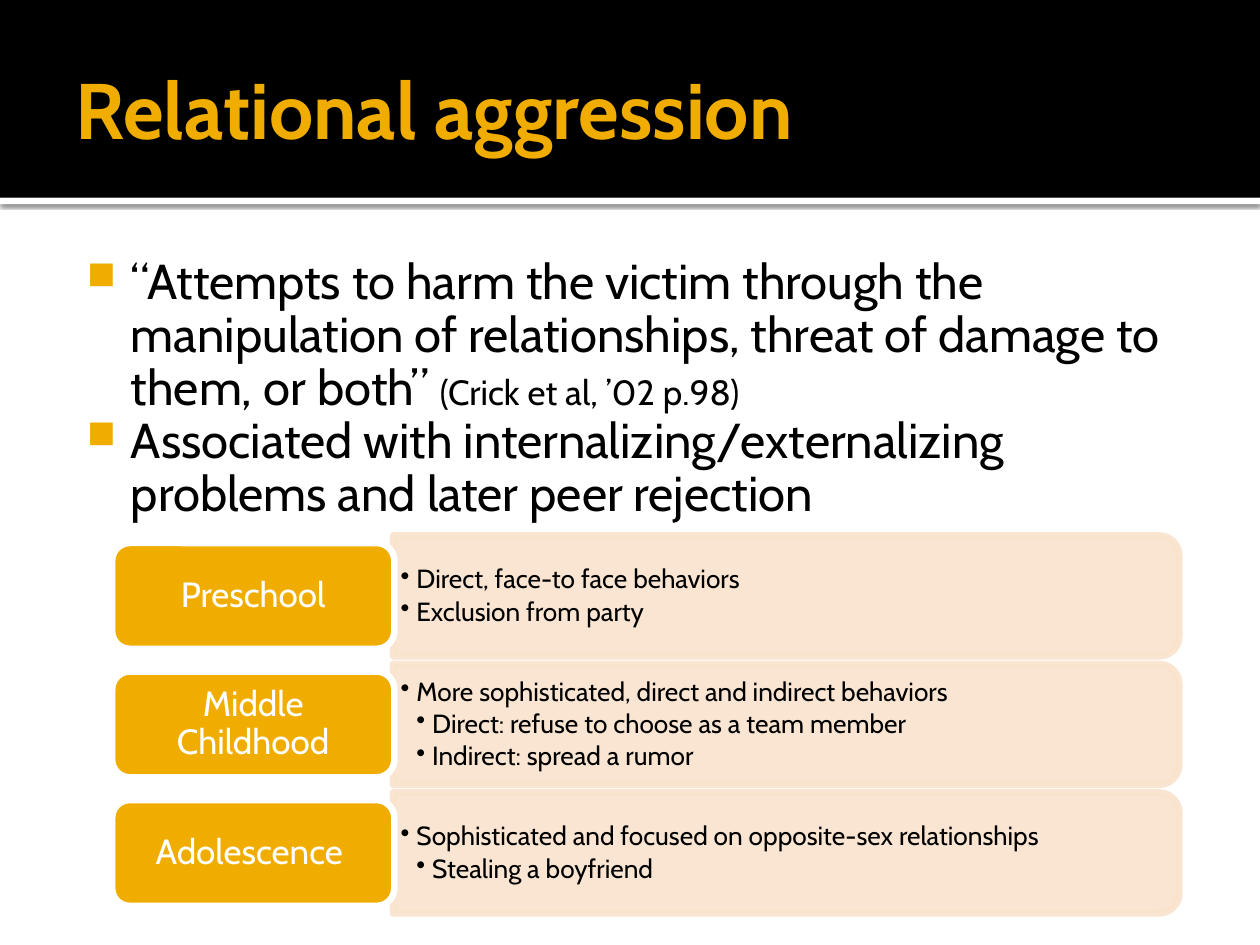
import dataclasses

import lxml.etree
import pptx
import pptx.dml.color
import pptx.enum.shapes
import pptx.enum.text
import pptx.oxml.ns
import pptx.util

EMU_PER_PX = 9144  # 100 px to the inch
SHAPES = pptx.enum.shapes.MSO_SHAPE
ANCHOR = pptx.enum.text.MSO_ANCHOR
ALIGN = pptx.enum.text.PP_ALIGN


@dataclasses.dataclass(frozen=True)
class Theme:
    font: str = "Cabin"
    accent: str = "F0AD00"
    panel: str = "F9E3CC"
    black: str = "000000"
    white: str = "FFFFFF"
    title_size: int = 45
    body_size: int = 28
    label_size: int = 20
    detail_size: int = 15
    outline: float = 3.78


def px(length):
    return pptx.util.Emu(length * EMU_PER_PX)


def rgb(colour):
    return pptx.dml.color.RGBColor.from_string(colour)


def add_xml(parent, tag, **attributes):
    values = {name: str(value) for name, value in attributes.items()}
    return lxml.etree.SubElement(parent, pptx.oxml.ns.qn(tag), values)


class SlideBuilder:
    def __init__(self, slide, theme):
        self.slide = slide
        self.theme = theme

    def shape(self, kind, box, fill, line=None, alpha=None):
        """Add a filled shape; alpha is the opacity of fill and line in percent."""
        shape = self.slide.shapes.add_shape(kind, *map(px, box))
        shape.shadow.inherit = False
        shape.fill.solid()
        shape.fill.fore_color.rgb = rgb(fill)
        if line:
            shape.line.color.rgb = rgb(line)
            shape.line.width = pptx.util.Pt(self.theme.outline)
        else:
            shape.line.fill.background()
        if alpha:
            for colour in shape.element.spPr.iter(pptx.oxml.ns.qn("a:srgbClr")):
                add_xml(colour, "a:alpha", val=alpha * 1000)
        return shape

    def drop_shadow(self, shape):
        effects = shape.element.spPr.find(pptx.oxml.ns.qn("a:effectLst"))
        shadow = add_xml(effects, "a:outerShdw", blurRad=pptx.util.Pt(2.5),
                         dist=pptx.util.Pt(0.8), dir=90 * 60000,
                         algn="t", rotWithShape=0)
        colour = add_xml(shadow, "a:srgbClr", val=self.theme.black)
        add_xml(colour, "a:alpha", val=60000)

    def text_box(self, box, insets, anchor=ANCHOR.MIDDLE):
        shape = self.slide.shapes.add_textbox(*map(px, box))
        return self.frame(shape, insets, anchor)

    def frame(self, shape, insets, anchor=ANCHOR.MIDDLE):
        """Prepare the shape's text frame; insets are left, top, right, bottom."""
        frame = shape.text_frame
        frame.word_wrap = True
        frame.vertical_anchor = anchor
        (frame.margin_left, frame.margin_top,
         frame.margin_right, frame.margin_bottom) = map(px, insets)
        return frame

    def paragraph(self, frame, runs, colour, bold=False, align=ALIGN.LEFT,
                  spacing=0.9, after=0):
        """Fill the next paragraph with runs of (text, size)."""
        paragraph = frame.paragraphs[-1]
        if paragraph.runs:
            paragraph = frame.add_paragraph()
        paragraph.alignment = align
        paragraph.line_spacing = spacing
        paragraph.space_after = pptx.util.Pt(after)
        for text, size in runs:
            run = paragraph.add_run()
            run.text = text
            run.font.name = self.theme.font
            run.font.size = pptx.util.Pt(size)
            run.font.bold = bold
            run.font.color.rgb = rgb(colour)
        return paragraph

    def bullet(self, paragraph, character, left, hanging, colour=None, percent=100):
        properties = paragraph._p.get_or_add_pPr()
        properties.set("marL", str(px(left)))
        properties.set("indent", str(px(-hanging)))
        if colour:
            add_xml(add_xml(properties, "a:buClr"), "a:srgbClr", val=colour)
        add_xml(properties, "a:buSzPct", val=percent * 1000)
        add_xml(properties, "a:buChar", char=character)

    def header(self, title):
        theme = self.theme
        rule = self.shape(SHAPES.RECTANGLE, (0, 157, 1000, 5), theme.white)
        self.drop_shadow(rule)
        self.shape(SHAPES.RECTANGLE, (0, 0, 1000, 157), theme.black)
        frame = self.text_box((50, 17, 900, 137), (10, 5, 5, 5))
        self.paragraph(frame, [(title, theme.title_size)], theme.accent,
                       bold=True, spacing=1.0)

    def body(self, points):
        frame = self.text_box((50, 194, 900, 506), (6, 10, 10, 5), ANCHOR.TOP)
        for runs in points:
            paragraph = self.paragraph(frame, runs, self.theme.black)
            self.bullet(paragraph, "■", 48, 35, self.theme.accent, 80)

    def stage(self, top, label, details):
        """Add one row: a label and its panel of (level, text) details."""
        theme = self.theme
        left, width, height = 312, 624, 96
        # The panel is drawn upright and turned about its centre.
        panel = self.shape(
            SHAPES.ROUND_2_SAME_RECTANGLE,
            (left + (width - height) // 2, top - (width - height) // 2, height, width),
            theme.panel, theme.panel, alpha=90)
        panel.rotation = 90
        frame = self.text_box((left, top + 5, 619, 87), (6, 3, 6, 3))
        for level, text in details:
            paragraph = self.paragraph(frame, [(text, theme.detail_size)],
                                       theme.black, after=2.25)
            self.bullet(paragraph, "•", 12.5 * level, 12.5)
        tab = self.shape(SHAPES.ROUNDED_RECTANGLE, (89, top + 6, 224, 84),
                         theme.accent, theme.white)
        self.paragraph(self.frame(tab, (8, 4, 8, 4)), [(label, theme.label_size)],
                       theme.white, align=ALIGN.CENTER)


def main():
    theme = Theme()
    presentation = pptx.Presentation()
    presentation.slide_width, presentation.slide_height = px(1000), px(750)
    slide = presentation.slides.add_slide(presentation.slide_layouts[6])
    builder = SlideBuilder(slide, theme)

    builder.header("Relational aggression")
    builder.body([
        [("“Attempts to harm the victim through the manipulation of "
          "relationships, threat of damage to them, or both” ", theme.body_size),
         ("(Crick et al, ’02 p.98)", theme.label_size)],
        [("Associated with internalizing/externalizing problems and later "
          "peer rejection", theme.body_size)],
    ])
    stages = [
        ("Preschool", [(1, "Direct, face-to face behaviors"),
                       (1, "Exclusion from party")]),
        ("Middle Childhood", [
            (1, "More sophisticated, direct and indirect behaviors"),
            (2, "Direct: refuse to choose as a team member"),
            (2, "Indirect: spread a rumor")]),
        ("Adolescence ", [
            (1, "Sophisticated and focused on opposite-sex relationships"),
            (2, "Stealing a boyfriend")]),
    ]
    for row, (label, details) in enumerate(stages):
        builder.stage(425 + 102 * row, label, details)
    presentation.save("out.pptx")


if __name__ == "__main__":
    main()
